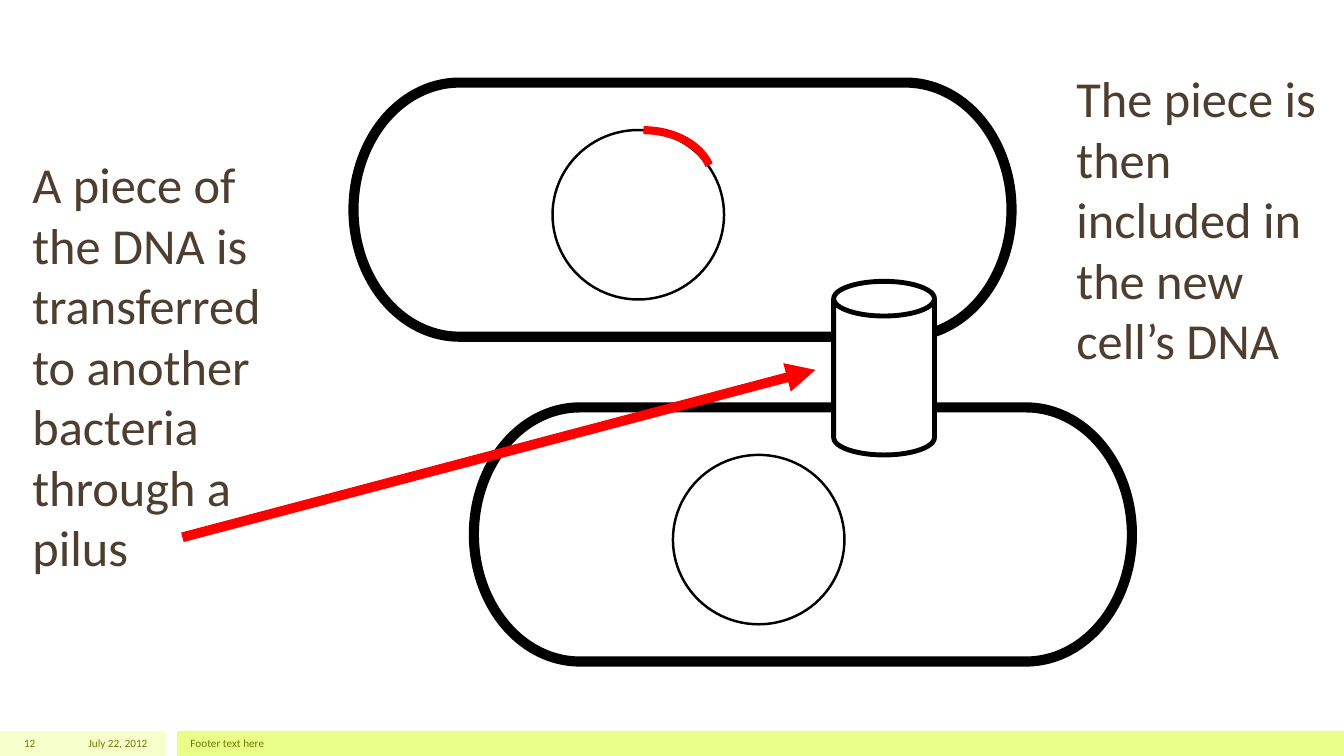
"""Build the slide on DNA transfer between two bacteria through a pilus."""
from dataclasses import dataclass

from pptx import Presentation
from pptx.dml.color import RGBColor
from pptx.enum.shapes import MSO_CONNECTOR, MSO_SHAPE as SHAPE
from pptx.enum.text import MSO_ANCHOR as ANCHOR, PP_ALIGN as ALIGN
from pptx.oxml.ns import qn
from pptx.util import Pt
from lxml.etree import SubElement


@dataclass(frozen=True)
class Theme:
    font: str = "Calibri"
    caption_size: float = 36
    footer_size: float = 8
    caption: str = "4D3E2F"
    footer: str = "688000"
    outline: str = "000000"
    highlight: str = "FF0000"
    pilus: str = "FFFFFF"
    bar_pale: str = "F6FFCC"
    bar_bright: str = "E9FF88"


THEME = Theme()
CAPTIONS = [
    ("A piece of the DNA is transferred to another bacteria through a pilus", (16, 106, 198, 312.5)),
    ("The piece is then included in the new cell’s DNA", (761.8, 44.6, 198, 225.4)),
]
FOOTER_TOP, FOOTER_HEIGHT = 522, 18
FOOTER_BARS = [(0, 118, THEME.bar_pale), (126.5, 833.5, THEME.bar_bright)]
FOOTERS = [
    ("July 22, 2012", 34, 78.5, ALIGN.RIGHT),
    ("Footer text here", 129, 720, ALIGN.LEFT),
    ("12", 0, 32.4, ALIGN.RIGHT),
]
CELL_ORIGINS = [(252.5, 59), (338.5, 291)]
CELL_SIZE = (470, 181.5)
DNA_OFFSET = (142.2, 33.9)
DNA_SIZE = (122.5, 121)
PILUS_BOX = (595.5, 201, 72, 124)
DNA_PIECE_BOX = (410.4, 93, 98.6, 72)
ARROW_ENDS = (130.3, 383.8, 582.5, 264.2)


def points(values):
    return [Pt(value) for value in values]


def add_outline(slide, kind, box, fill=None, line=None, width=0, adjustments=()):
    shape = slide.shapes.add_shape(kind, *points(box))
    shape.shadow.inherit = False
    for index, value in enumerate(adjustments):
        shape.adjustments[index] = value
    if fill:
        shape.fill.solid()
        shape.fill.fore_color.rgb = RGBColor.from_string(fill)
    else:
        shape.fill.background()
    if line:
        shape.line.color.rgb = RGBColor.from_string(line)
        shape.line.width = Pt(width)
    else:
        shape.line.fill.background()


def add_words(slide, words, box, size, color, align=ALIGN.LEFT, anchor=ANCHOR.TOP):
    frame = slide.shapes.add_textbox(*points(box)).text_frame
    frame.word_wrap = True
    frame.vertical_anchor = anchor
    paragraph = frame.paragraphs[0]
    paragraph.alignment = align
    run = paragraph.add_run()
    run.text = words
    run.font.name = THEME.font
    run.font.size = Pt(size)
    run.font.color.rgb = RGBColor.from_string(color)


def add_arrow(slide, ends):
    arrow = slide.shapes.add_connector(MSO_CONNECTOR.STRAIGHT, *points(ends))
    arrow.line.color.rgb = RGBColor.from_string(THEME.highlight)
    arrow.line.width = Pt(7)
    SubElement(arrow.line._get_or_add_ln(), qn("a:tailEnd"), type="triangle")
    SubElement(arrow._element.spPr, qn("a:effectLst"))


def main():
    deck = Presentation()
    deck.slide_width, deck.slide_height = Pt(960), Pt(540)
    slide = deck.slides.add_slide(deck.slide_layouts[6])

    for left, width, color in FOOTER_BARS:
        add_outline(slide, SHAPE.RECTANGLE, (left, FOOTER_TOP, width, FOOTER_HEIGHT), fill=color)
    for words, left, width, align in FOOTERS:
        add_words(slide, words, (left, FOOTER_TOP, width, FOOTER_HEIGHT),
                  THEME.footer_size, THEME.footer, align, ANCHOR.MIDDLE)

    for left, top in CELL_ORIGINS:
        dna_origin = (left + DNA_OFFSET[0], top + DNA_OFFSET[1])
        add_outline(slide, SHAPE.FLOWCHART_TERMINATOR, (left, top, *CELL_SIZE),
                    line=THEME.outline, width=7.25)
        add_outline(slide, SHAPE.OVAL, (*dna_origin, *DNA_SIZE), line=THEME.outline, width=1.75)

    add_outline(slide, SHAPE.CAN, PILUS_BOX, fill=THEME.pilus, line=THEME.outline,
                width=3.5, adjustments=[0.344])
    add_arrow(slide, ARROW_ENDS)
    add_outline(slide, SHAPE.ARC, DNA_PIECE_BOX, line=THEME.highlight, width=5.75,
                adjustments=[162, 208.04])
    for words, box in CAPTIONS:
        add_words(slide, words, box, THEME.caption_size, THEME.caption)

    deck.save("out.pptx")


if __name__ == "__main__":
    main()
